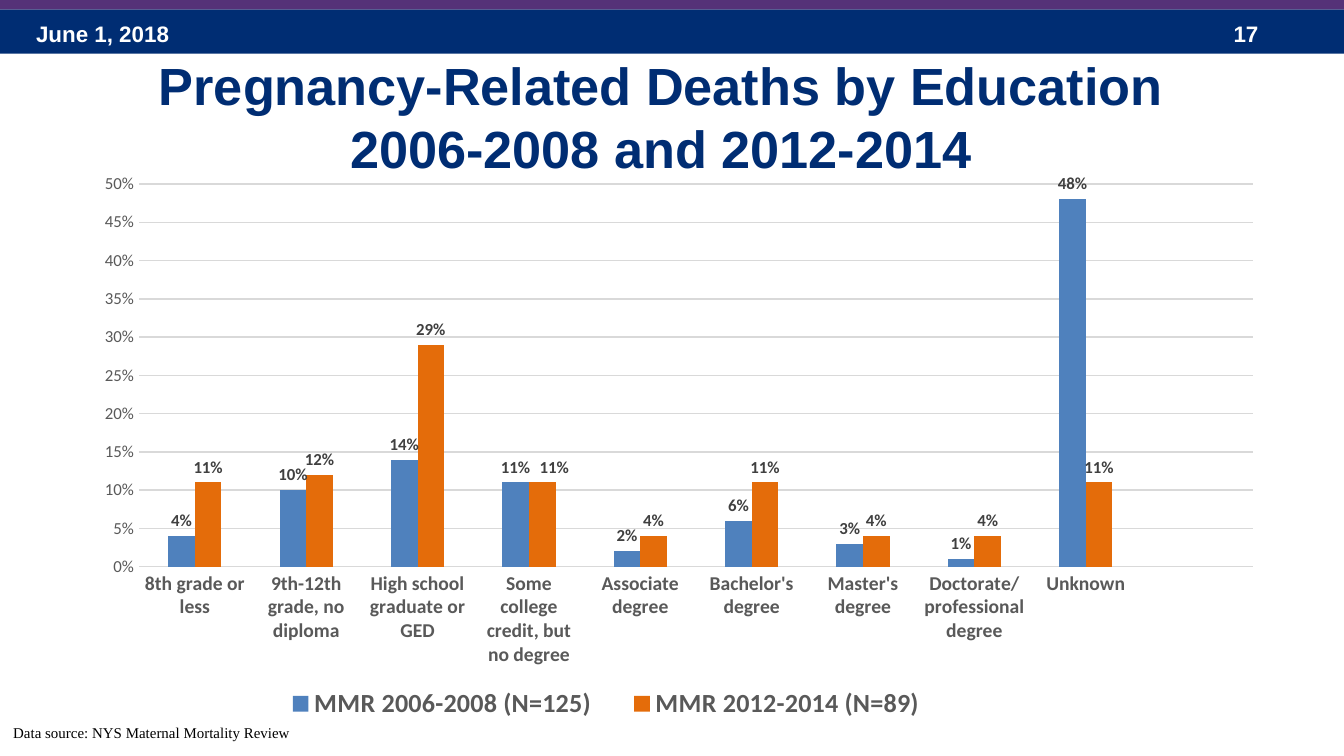
from lxml import etree
from pptx import Presentation
from pptx.chart.data import CategoryChartData
from pptx.dml.color import RGBColor
from pptx.enum import chart as ch, shapes, text
from pptx.oxml.ns import qn
from pptx.util import Inches, Pt

NAVY = RGBColor(0x00, 0x2D, 0x73)
PURPLE = RGBColor(0x55, 0x32, 0x78)
WHITE = RGBColor(0xFF, 0xFF, 0xFF)
BLACK = RGBColor(0, 0, 0)
BLUE = RGBColor(0x4F, 0x81, 0xBD)
ORANGE = RGBColor(0xE4, 0x6C, 0x0A)
GRID = RGBColor(0xD9, 0xD9, 0xD9)
GRAY = RGBColor(0x59, 0x59, 0x59)
DARK_GRAY = RGBColor(0x40, 0x40, 0x40)

# Content
TITLE = "Pregnancy-Related Deaths by Education 2006-2008 and 2012-2014"
BARS = [  # top, height, colour
    (0.07, 0.33, NAVY),
    (-0.02, 0.09, PURPLE),
]
HEADER = dict(size=Pt(12), name="Arial", bold=True)
SOURCE = dict(size=Pt(8), name="Times New Roman")
LABELS = [  # text, box, wrap, format, colour
    ("June 1, 2018", (0.17, 0.1, 2.33, 0.3), True, HEADER, WHITE),
    ("17", (9.08, 0.1, 0.75, 0.3), True, HEADER, WHITE),
    ("Data source: NYS Maternal Mortality Review",
     (0, 5.33, 2.27, 0.24), False, SOURCE, BLACK),
]
EDUCATION = [  # category, 2006-2008, 2012-2014; the last slot is empty
    ("8th grade or less", 0.04, 0.11),
    ("9th-12th grade, no diploma", 0.10, 0.12),
    ("High school graduate or GED", 0.14, 0.29),
    ("Some college credit, but no degree", 0.11, 0.11),
    ("Associate degree", 0.02, 0.04),
    ("Bachelor's degree", 0.06, 0.11),
    ("Master's degree", 0.03, 0.04),
    ("Doctorate/ professional degree", 0.01, 0.04),
    ("Unknown", 0.48, 0.11),
    ("", None, None),
]
SERIES = [("MMR 2006-2008 (N=125)", BLUE), ("MMR 2012-2014 (N=89)", ORANGE)]
PLOT_AREA = dict(layoutTarget="inner", xMode="edge", yMode="edge",
                 x=0.05, y=0.04, w=0.93, h=0.67)
LEGEND_AREA = dict(xMode="edge", yMode="edge", x=0.15, y=0.91, w=0.58, h=0.08)


def format_font(font, values, colour):
    for name, value in values.items():
        setattr(font, name, value)
    font.color.rgb = colour


def make_layout(values):
    layout = etree.Element(qn("c:layout"))
    manual = etree.SubElement(layout, qn("c:manualLayout"))
    for name, value in values.items():
        etree.SubElement(manual, qn("c:" + name)).set("val", str(value))
    return layout


def place(element, values, after=None):
    for old in element.findall(qn("c:layout")):
        element.remove(old)
    layout = make_layout(values)
    if after is None:
        element.insert(0, layout)
    else:
        element.find(qn(after)).addnext(layout)
    return layout


def calibri(size, bold=False):
    return dict(name="Calibri", size=Pt(size), bold=bold)


# A 16:9 page
deck = Presentation()
deck.slide_width = Inches(10)
deck.slide_height = Inches(10) * 9 // 16
page = deck.slides.add_slide(deck.slide_layouts[5])

# Header bars
for top, height, colour in BARS:
    bar = page.shapes.add_shape(shapes.MSO_SHAPE.RECTANGLE, 0, Inches(top),
                                deck.slide_width, Inches(height))
    bar.shadow.inherit = False
    bar.fill.solid()
    bar.fill.fore_color.rgb = colour
    bar.line.fill.background()

# Title
title = page.shapes.title
title.left, title.top, title.width, title.height = map(
    Inches, (0.84, 0.34, 8.15, 1.04))
frame = title.text_frame
frame.text = TITLE
frame.auto_size = text.MSO_AUTO_SIZE.NONE
frame.vertical_anchor = text.MSO_ANCHOR.BOTTOM
para = frame.paragraphs[0]
para.alignment = text.PP_ALIGN.CENTER
format_font(para.font, dict(size=Pt(28), name="Arial", bold=True), NAVY)

# Chart
data = CategoryChartData(number_format="0%")
names, *columns = zip(*EDUCATION)
data.categories = names
for (name, _), values in zip(SERIES, columns):
    data.add_series(name, values)
chart = page.shapes.add_chart(
    ch.XL_CHART_TYPE.COLUMN_CLUSTERED,
    *map(Inches, (0.59, 1.2, 8.91, 4.25)), data).chart
chart.has_title = False
format_font(chart.font, calibri(10), BLACK)
plot = chart.plots[0]
plot.gap_width, plot.overlap, plot.vary_by_categories = 219, 0, False
place(chart._chartSpace.chart.plotArea, PLOT_AREA)

# Axes
category_axis, value_axis = chart.category_axis, chart.value_axis
for axis, values in ((category_axis, calibri(10.5, True)), (value_axis, calibri(9))):
    axis.major_tick_mark = axis.minor_tick_mark = ch.XL_TICK_MARK.NONE
    format_font(axis.tick_labels.font, values, GRAY)
value_axis.minimum_scale, value_axis.maximum_scale = 0, 0.5
value_axis.major_unit = 0.05
value_axis.tick_labels.number_format = "0%"
value_axis.tick_labels.number_format_is_linked = False
value_axis.format.line.fill.background()
for line in (category_axis.format.line, value_axis.major_gridlines.format.line):
    line.color.rgb = GRID
    line.width = Pt(0.75)

# Series and value labels
for series, (_, colour) in zip(plot.series, SERIES):
    series.format.fill.solid()
    series.format.fill.fore_color.rgb = colour
    labels = series.data_labels
    labels.show_value = True
    labels.number_format = "0%"
    labels.number_format_is_linked = False
    labels.position = ch.XL_LABEL_POSITION.OUTSIDE_END
    format_font(labels.font, calibri(9, True), DARK_GRAY)

# Shift one label clear of its neighbour
shifted = plot.series[1].points[3].data_label
format_font(shifted.font, calibri(9, True), DARK_GRAY)
shifted.position = ch.XL_LABEL_POSITION.OUTSIDE_END
label = plot.series[1].data_labels._element.find(qn("c:dLbl"))
layout = place(label, dict(x=0.01, y=0), after="c:idx")
number_format = etree.Element(qn("c:numFmt"), formatCode="0%", sourceLinked="0")
layout.addnext(number_format)

# Legend
chart.has_legend = True
legend = chart.legend
legend.position = ch.XL_LEGEND_POSITION.BOTTOM
legend.include_in_layout = False
format_font(legend.font, calibri(14, True), GRAY)
place(legend._element, LEGEND_AREA, after="c:legendPos")

# Date, page number and data source
for words, bounds, wrap, values, colour in LABELS:
    box = page.shapes.add_textbox(*map(Inches, bounds))
    frame = box.text_frame
    frame.word_wrap = wrap
    frame.vertical_anchor = text.MSO_ANCHOR.MIDDLE
    span = frame.paragraphs[0].add_run()
    span.text = words
    format_font(span.font, values, colour)

deck.save("out.pptx")
